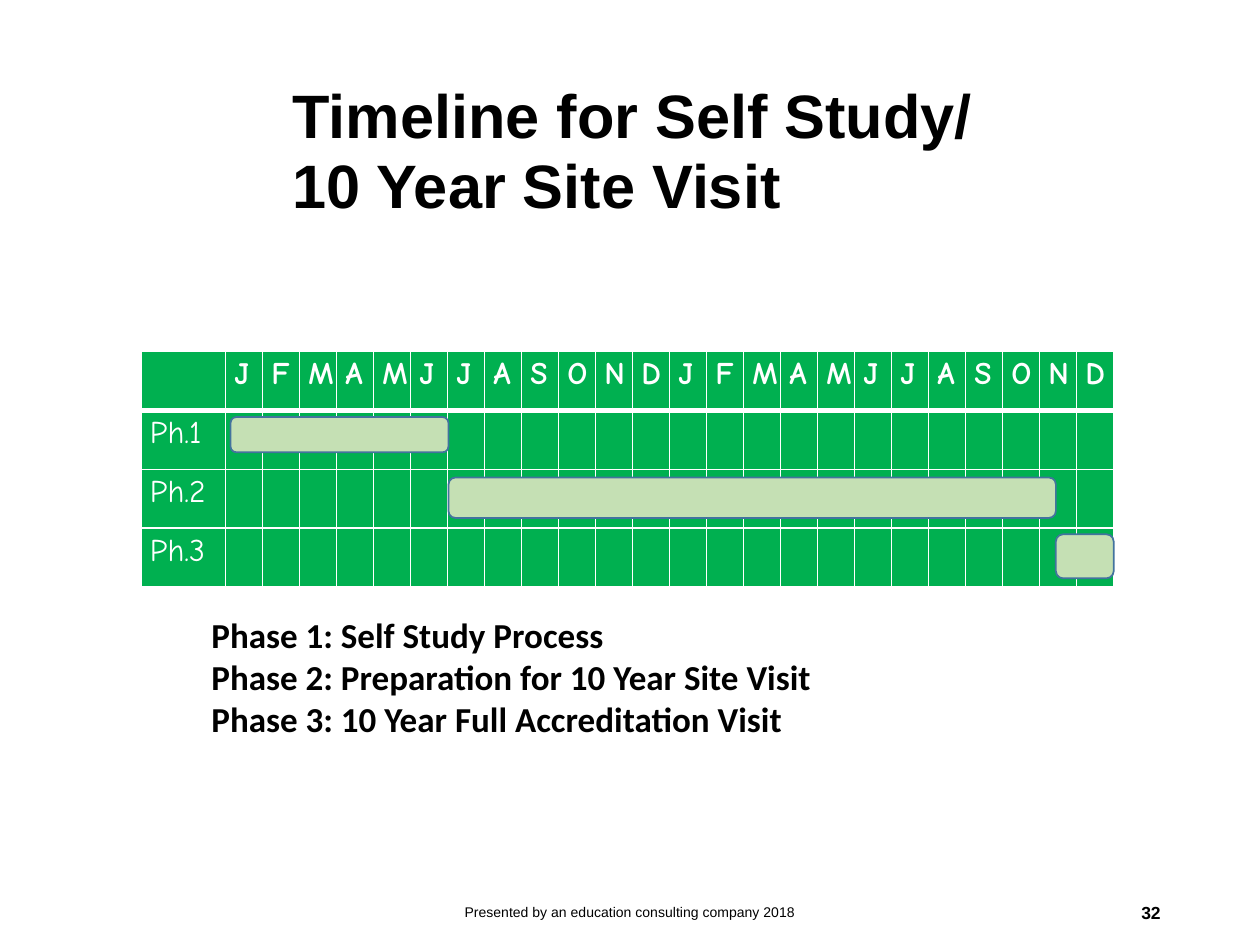
from dataclasses import dataclass

from lxml import etree
from pptx import Presentation
from pptx.dml.color import RGBColor
from pptx.enum.shapes import MSO_SHAPE
from pptx.enum.text import MSO_ANCHOR, PP_ALIGN
from pptx.oxml.ns import qn
from pptx.util import Inches, Pt

ROUNDED = MSO_SHAPE.ROUNDED_RECTANGLE
TOP, MIDDLE = MSO_ANCHOR.TOP, MSO_ANCHOR.MIDDLE
LEFT, CENTER, RIGHT = PP_ALIGN.LEFT, PP_ALIGN.CENTER, PP_ALIGN.RIGHT


@dataclass(frozen=True)
class Theme:
    ink: str = "000000"
    grid: str = "FFFFFF"
    cell: str = "00B050"
    bar: str = "C5E0B4"
    bar_line: str = "43739E"
    heading_font: str = "Arial"
    body_font: str = "Calibri"
    table_font: str = "Comic Neue"
    title_size: int = 35
    phase_size: int = 20
    table_size: int = 18
    number_size: int = 10
    footer_size: int = 8


THEME = Theme()
MONTHS = "JFMAMJJASOND" * 2
PHASES = [
    "Phase 1: Self Study Process",
    "Phase 2: Preparation for 10 Year Site Visit",
    "Phase 3: 10 Year Full Accreditation Visit",
]
# Left, top, width and height of each phase bar, in inches
BARS = [(1.83, 3.31, 1.73, 0.28), (3.56, 3.79, 4.82, 0.32), (8.38, 4.24, 0.46, 0.35)]
TABLE_WIDTH, TABLE_HEIGHT, LABEL_WIDTH = 7.72, 1.87, 0.67


def add_run(paragraph, text, font, size, color, bold=False):
    run = paragraph.add_run()
    run.text = text
    run.font.name = font
    run.font.size = Pt(size)
    run.font.bold = bold
    run.font.color.rgb = RGBColor.from_string(color)


def add_title(slide, lines):
    title = slide.shapes.title
    title.left, title.top = Inches(2.22), Inches(0.5)
    title.width, title.height = Inches(6.15), Inches(1.42)
    title.text_frame.vertical_anchor = MIDDLE
    paragraph = title.text_frame.paragraphs[0]
    paragraph.alignment = LEFT
    paragraph.line_spacing = 0.95
    for index, line in enumerate(lines):
        if index:
            paragraph.add_line_break()
        add_run(paragraph, line, THEME.heading_font, THEME.title_size, THEME.ink, True)


def add_text(slide, box, lines, font, size, bold=False, align=LEFT, anchor=TOP):
    frame = slide.shapes.add_textbox(*map(Inches, box)).text_frame
    frame.word_wrap = True
    frame.vertical_anchor = anchor
    for index, line in enumerate(lines):
        paragraph = frame.add_paragraph() if index else frame.paragraphs[0]
        paragraph.alignment = align
        add_run(paragraph, line, font, size, THEME.ink, bold)


def set_border(cell, side, points):
    line = etree.Element(qn(f"a:{side}"), w=str(Pt(points)))
    fill = etree.SubElement(line, qn("a:solidFill"))
    etree.SubElement(fill, qn("a:srgbClr"), val=THEME.grid)
    cell_properties = cell._tc.get_or_add_tcPr()
    # Borders come before the fill, in the order they are set
    borders = [child for child in cell_properties if child.tag.startswith(qn("a:ln"))]
    cell_properties.insert(len(borders), line)


def format_cell(cell, text, is_header, below_header):
    cell.fill.solid()
    cell.fill.fore_color.rgb = RGBColor.from_string(THEME.cell)
    cell.margin_left = cell.margin_right = Inches(0.07)
    cell.margin_top = cell.margin_bottom = Inches(0.04)
    paragraph = cell.text_frame.paragraphs[0]
    paragraph.font.size = Pt(THEME.table_size)
    if text:
        add_run(paragraph, text, THEME.table_font, THEME.table_size, THEME.grid, is_header)
    widths = {"lnL": 1, "lnR": 1, "lnT": 3 if below_header else 1, "lnB": 3 if is_header else 1}
    for side, points in widths.items():
        set_border(cell, side, points)


def add_timeline(slide):
    rows = [["", *MONTHS]]
    rows += [[f"Ph.{number}"] + [""] * len(MONTHS) for number in range(1, len(PHASES) + 1)]
    table = slide.shapes.add_table(
        len(rows), len(rows[0]),
        Inches(1.12), Inches(2.79), Inches(TABLE_WIDTH), Inches(TABLE_HEIGHT),
    ).table
    month_width = (TABLE_WIDTH - LABEL_WIDTH) / len(MONTHS)
    for index, column in enumerate(table.columns):
        column.width = Inches(month_width if index else LABEL_WIDTH)
    for row_index, texts in enumerate(rows):
        table.rows[row_index].height = Inches(TABLE_HEIGHT / len(rows))
        for column_index, text in enumerate(texts):
            format_cell(table.cell(row_index, column_index), text, row_index == 0, row_index == 1)


def add_bar(slide, box):
    bar = slide.shapes.add_shape(ROUNDED, *map(Inches, box))
    bar.shadow.inherit = False
    bar.fill.solid()
    bar.fill.fore_color.rgb = RGBColor.from_string(THEME.bar)
    bar.line.color.rgb = RGBColor.from_string(THEME.bar_line)
    bar.line.width = Pt(1)


def main():
    deck = Presentation()
    deck.slide_width, deck.slide_height = Inches(10), Inches(7.5)
    slide = deck.slides.add_slide(deck.slide_layouts[5])

    # Title
    add_title(slide, ["Timeline for Self Study/", "10 Year Site Visit"])

    # Two-year month grid and its legend
    add_timeline(slide)
    add_text(slide, (1.58, 4.82, 7.03, 1.11), PHASES,
             THEME.body_font, THEME.phase_size, bold=True)

    # Phase bars
    for box in BARS:
        add_bar(slide, box)

    # Footer and slide number
    add_text(slide, (3.31, 7.04, 3.38, 0.4),
             ["Presented by an education consulting company 2018"],
             THEME.heading_font, THEME.footer_size, align=CENTER, anchor=MIDDLE)
    add_text(slide, (7.06, 7.04, 2.25, 0.4), ["32"],
             THEME.heading_font, THEME.number_size, bold=True, align=RIGHT, anchor=MIDDLE)

    deck.save("out.pptx")


if __name__ == "__main__":
    main()
